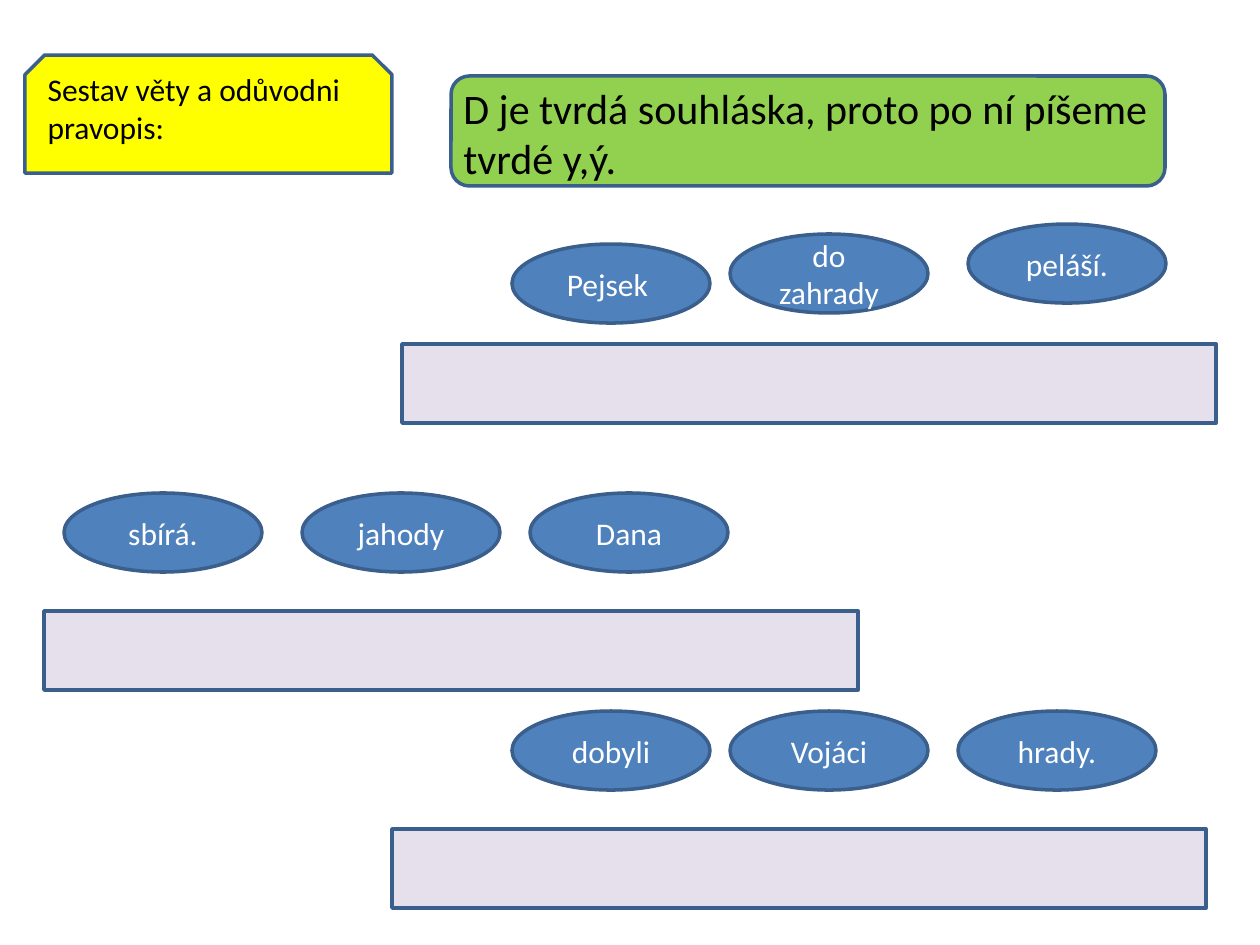
from pptx import Presentation
from pptx import util as u
from pptx.dml.color import RGBColor
from pptx.enum import shapes, text

PX = u.Inches(1) / 126
COLORS = {
    "outline": "3A5F8C",
    "task": "FFFF00",
    "rule": "92D050",
    "word": "4F81BD",
    "answer": "E6E0EC",
    "dark": "000000",
    "light": "FFFFFF",
}
WORD_SIZE = (198, 79)
ANSWER_SIZE = (814, 79)

# Answer box corner, then each word with its offset from that corner
SENTENCES = [
    ((402, 344), [("Pejsek ", 110, -100), ("do zahrady", 328, -110), ("peláší.", 566, -120)]),
    ((44, 611), [("sbírá.", 20, -118), ("jahody", 258, -118), ("Dana", 486, -118)]),
    ((392, 829), [("dobyli", 120, -118), ("Vojáci", 338, -118), ("hrady.", 566, -118)]),
]


def px(*lengths):
    return [round(length * PX) for length in lengths]


def add_box(slide, kind, box, fill):
    shape = slide.shapes.add_shape(kind, *px(*box))
    shape.shadow.inherit = False
    shape.fill.solid()
    shape.fill.fore_color.rgb = RGBColor.from_string(COLORS[fill])
    shape.line.color.rgb = RGBColor.from_string(COLORS["outline"])
    shape.line.width = u.Pt(2)
    return shape


def write(shape, words, size, color, align, anchor):
    frame = shape.text_frame
    frame.text = words
    frame.word_wrap = True
    frame.auto_size = text.MSO_AUTO_SIZE.NONE
    frame.vertical_anchor = anchor
    paragraph = frame.paragraphs[0]
    paragraph.alignment = align
    font = paragraph.runs[0].font
    font.name = "Calibri"
    font.size = u.Pt(size)
    font.color.rgb = RGBColor.from_string(COLORS[color])


def add_task(slide, left, top):
    add_box(slide, shapes.MSO_SHAPE.SNIP_2_SAME_RECTANGLE, (left, top, 367, 118), "task")
    title = slide.shapes.title
    title.left, title.top, title.width, title.height = px(left + 10, top + 9, 338, 90)
    write(title, "Sestav věty a odůvodni pravopis:", 18, "dark",
          text.PP_ALIGN.LEFT, text.MSO_ANCHOR.TOP)
    slide.shapes.element.append(title.element)  # bring in front of its frame


def add_rule(slide, left, top):
    add_box(slide, shapes.MSO_SHAPE.ROUNDED_RECTANGLE, (left, top, 714, 110), "rule")
    label = slide.shapes.add_textbox(*px(left, top, 714, 115))
    write(label, "D je tvrdá souhláska, proto po ní píšeme tvrdé y,ý.", 24, "dark",
          text.PP_ALIGN.LEFT, text.MSO_ANCHOR.TOP)


def add_sentence(slide, left, top, words):
    """Place the scrambled words above an empty answer box."""
    add_box(slide, shapes.MSO_SHAPE.RECTANGLE, (left, top, *ANSWER_SIZE), "answer")
    for word, right, down in words:
        oval = add_box(slide, shapes.MSO_SHAPE.OVAL,
                       (left + right, top + down, *WORD_SIZE), "word")
        write(oval, word, 18, "light", text.PP_ALIGN.CENTER, text.MSO_ANCHOR.MIDDLE)


def main():
    presentation = Presentation()
    presentation.slide_width, presentation.slide_height = px(1260, 945)
    slide = presentation.slides.add_slide(presentation.slide_layouts.get_by_name("Title Only"))
    add_task(slide, 25, 55)
    add_rule(slide, 451, 76)
    for (left, top), words in SENTENCES:
        add_sentence(slide, left, top, words)
    presentation.save("out.pptx")


if __name__ == "__main__":
    main()
